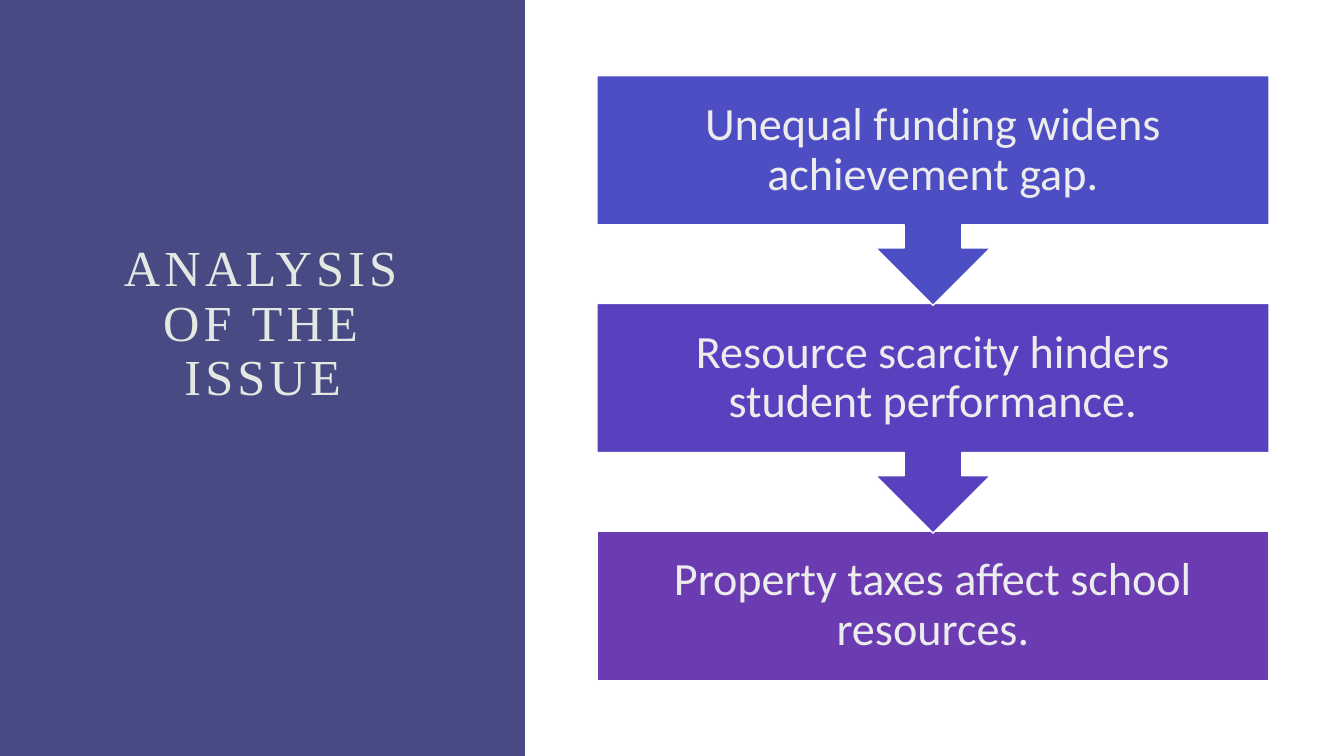
from pptx import Presentation
from pptx.dml.color import RGBColor
from pptx.enum.shapes import MSO_SHAPE
from pptx.enum.text import MSO_ANCHOR, PP_ALIGN
from pptx.util import Pt

RECTANGLE = MSO_SHAPE.RECTANGLE
CALLOUT = MSO_SHAPE.UP_ARROW_CALLOUT
MIDDLE, BOTTOM = MSO_ANCHOR.MIDDLE, MSO_ANCHOR.BOTTOM
CENTER = PP_ALIGN.CENTER

WHITE = RGBColor(0xFF, 0xFF, 0xFF)
PANEL = RGBColor(0x48, 0x4A, 0x83)
TITLE_TEXT = RGBColor(0xE3, 0xE8, 0xE2)
STEP_TEXT = RGBColor(0xEC, 0xEC, 0xEC)

PAGE_WIDTH, PAGE_HEIGHT = 960, 540
STEP_HEIGHT, CALLOUT_HEIGHT = 106.6, 164.1

STEPS = [
    ("Unequal funding widens achievement gap.", RGBColor(0x4D, 0x4E, 0xC3)),
    ("Resource scarcity hinders student performance.", RGBColor(0x58, 0x40, 0xBE)),
    ("Property taxes affect school resources.", RGBColor(0x6A, 0x3B, 0xB1)),
]


def add_block(page, kind, box, color, outlined=False):
    shape = page.shapes.add_shape(kind, *map(Pt, box))
    shape.shadow.inherit = False
    shape.fill.solid()
    shape.fill.fore_color.rgb = color
    if outlined:
        shape.line.color.rgb = WHITE
        shape.line.width = Pt(1)
    else:
        shape.line.fill.background()
    return shape


def add_label(page, box, text, font, size, color, anchor, inset, spacing=0):
    """Add centred text; inset is (horizontal, vertical), spacing is in points."""
    label = page.shapes.add_textbox(*map(Pt, box))
    frame = label.text_frame
    frame.word_wrap = True
    frame.vertical_anchor = anchor
    frame.margin_left = frame.margin_right = Pt(inset[0])
    frame.margin_top = frame.margin_bottom = Pt(inset[1])
    para = frame.paragraphs[0]
    para.alignment = CENTER
    para.line_spacing = 0.9
    span = para.add_run()
    span.text = text
    span.font.name = font
    span.font.size = Pt(size)
    span.font.color.rgb = color
    if spacing:
        span.font._element.set("spc", str(spacing * 100))


def add_title_panel(page, left, top, width, height):
    add_block(page, RECTANGLE, (left, top, width, height), PANEL)
    title_box = (left + 67.5, top + 54, width - 134.5, 240)
    add_label(page, title_box, "ANALYSIS OF THE ISSUE", "Times New Roman", 36,
              TITLE_TEXT, BOTTOM, (7.2, 3.6), spacing=3)


def add_step_flow(page, left, top, width, height):
    """Stack the steps from the last up, so that each arrow overlaps the next step."""
    pitch = (height - STEP_HEIGHT) / (len(STEPS) - 1)
    last = len(STEPS) - 1
    for index, (text, color) in reversed(list(enumerate(STEPS))):
        step_top = top + index * pitch
        step_box = (left, step_top, width, STEP_HEIGHT)
        if index == last:
            add_block(page, RECTANGLE, step_box, color, outlined=True)
        else:
            callout_box = (left, step_top, width, CALLOUT_HEIGHT)
            callout = add_block(page, CALLOUT, callout_box, color, outlined=True)
            callout.rotation = 180
        add_label(page, step_box, text, "Calibri", 33, STEP_TEXT, MIDDLE,
                  (18.7, 18.7))


def main():
    deck = Presentation()
    deck.slide_width, deck.slide_height = Pt(PAGE_WIDTH), Pt(PAGE_HEIGHT)
    page = deck.slides.add_slide(deck.slide_layouts[6])
    add_title_panel(page, 0, 0, 375, PAGE_HEIGHT)
    add_step_flow(page, 426.4, 54, 480, 432)
    deck.save("out.pptx")


if __name__ == "__main__":
    main()
